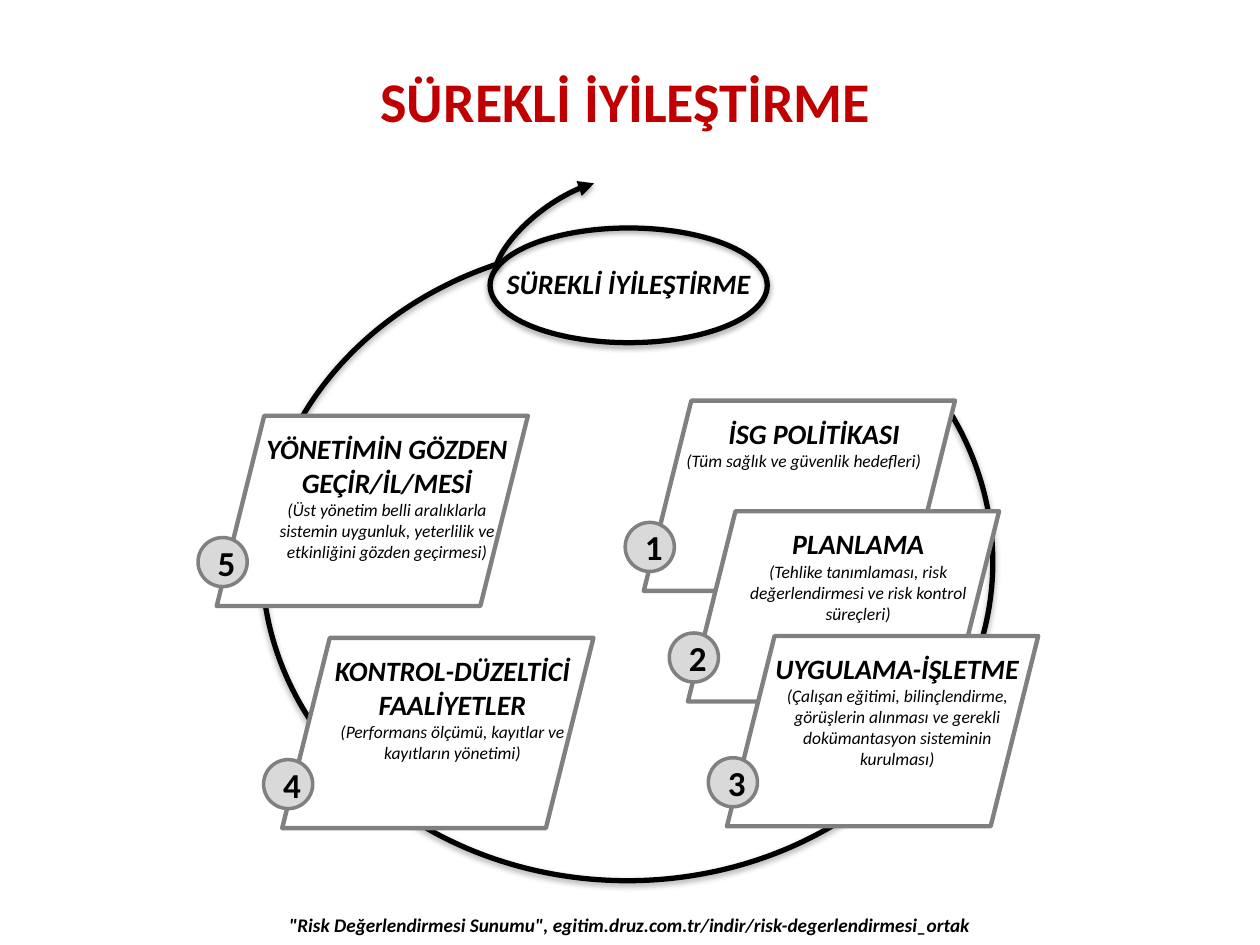
import pptx
import pptx.util
import pptx.dml.color
import pptx.enum.shapes
import pptx.enum.text
import pptx.oxml
import pptx.oxml.ns

HUES = {"ink": "000000", "red": "C00000", "gray": "808080",
        "pale": "D9D9D9", "white": "FFFFFF"}
FORM = pptx.enum.shapes.MSO_SHAPE
ALIGN = pptx.enum.text.PP_ALIGN
ANCHOR = pptx.enum.text.MSO_ANCHOR
SPACE = pptx.oxml.ns.nsdecls("a")
PAGE = (0, 0, pptx.util.Inches(10), pptx.util.Inches(7.5))

STEPS = [
    (51.1, 42.4, "İSG POLİTİKASI", "(Tüm sağlık ve güvenlik hedefleri)", ALIGN.LEFT),
    (54.6, 54.1, "PLANLAMA",
     "(Tehlike tanımlaması, risk değerlendirmesi ve risk kontrol süreçleri)", ALIGN.CENTER),
    (57.7, 67.3, "UYGULAMA-İŞLETME",
     "(Çalışan eğitimi, bilinçlendirme, görüşlerin alınması ve gerekli "
     "dokümantasyon sisteminin kurulması)", ALIGN.CENTER),
    (22.4, 67.5, "KONTROL-DÜZELTİCİ FAALİYETLER",
     "(Performans ölçümü, kayıtlar ve kayıtların yönetimi)", ALIGN.CENTER),
    (17.2, 44, "YÖNETİMİN GÖZDEN GEÇİR/İL/MESİ",
     "(Üst yönetim belli aralıklarla sistemin uygunluk, yeterlilik ve "
     "etkinliğini gözden geçirmesi)", ALIGN.CENTER),
]


def cut(box, x, y, wide, high):
    left, top, width, height = box
    return (int(left + width * x / 100), int(top + height * y / 100),
            int(width * wide / 100), int(height * high / 100))


def hue(name):
    return pptx.dml.color.RGBColor.from_string(HUES[name])


def style(para, size, tint="ink", slant=True, bold=True, align=ALIGN.CENTER):
    para.alignment = align
    for run in para.runs:
        font = run.font
        font.name, font.size = "Calibri", pptx.util.Pt(size)
        font.bold, font.italic = bold, slant
        font.color.rgb = hue(tint)


def draw(shapes, form, box, line, width, fill=None):
    shape = shapes.add_shape(form, *box)
    shape.shadow.inherit = False
    if fill:
        shape.fill.solid()
        shape.fill.fore_color.rgb = hue(fill)
    else:
        shape.fill.background()
    shape.line.color.rgb = hue(line)
    shape.line.width = pptx.util.Pt(width)
    return shape


def write(shapes, box, text, size):
    frame = shapes.add_textbox(*box).text_frame
    frame.word_wrap = True
    frame.auto_size = pptx.enum.text.MSO_AUTO_SIZE.SHAPE_TO_FIT_TEXT
    frame.text = text
    style(frame.paragraphs[0], size)
    return frame


def shade(shape):
    glow = pptx.oxml.parse_xml(
        f'<a:outerShdw {SPACE} blurRad="40000" dist="23000" dir="5400000" rotWithShape="0">'
        f'<a:srgbClr val="{HUES["ink"]}"><a:alpha val="35000"/></a:srgbClr></a:outerShdw>')
    shape.element.spPr.find(pptx.oxml.ns.qn("a:effectLst")).append(glow)


def curve(shapes, box, start, end):
    arc = draw(shapes, FORM.ARC, box, "ink", 3)
    arc.adjustments[0], arc.adjustments[1] = start, end
    shade(arc)
    return arc


def cycle(slide, box):
    shapes = slide.shapes.add_group_shape().shapes
    curve(shapes, cut(box, 0, 12.15, 100, 87.85), 201.32, 148.09)
    shade(draw(shapes, FORM.OVAL, cut(box, 31.2, 10.07, 37.93, 15.8), "ink", 3))
    arrow = curve(shapes, cut(box, 36.55, 0, 9.31, 22.57), 169.62, 39.99)
    arrow.rotation = 233.3
    arrow.line._get_or_add_ln().append(
        pptx.oxml.parse_xml(f'<a:tailEnd {SPACE} type="triangle"/>'))
    write(shapes, cut(box, 31, 14.58, 38.28, 6.42), "SÜREKLİ İYİLEŞTİRME", 16)


def step(slide, box, rank, head, note, align):
    shapes = slide.shapes.add_group_shape().shapes
    draw(shapes, FORM.PARALLELOGRAM, box, "gray", 2.5, "white")
    frame = write(shapes, cut(box, 9.7, 5, 90, 58), head, 16)
    para = frame.add_paragraph()
    para.text = note
    style(para, 10, bold=False, align=align)
    badge = draw(shapes, FORM.OVAL, cut(box, -6, 64, 15.8, 25.8), "gray", 2, "pale")
    frame = badge.text_frame
    frame.margin_right = pptx.util.Inches(0.04)
    frame.vertical_anchor = ANCHOR.MIDDLE
    frame.text = str(rank)
    style(frame.paragraphs[0], 20, slant=False)


def title(slide, box):
    shape = slide.shapes.title
    shape.left, shape.top, shape.width, shape.height = box
    frame = shape.text_frame
    frame.vertical_anchor = ANCHOR.TOP
    frame.text = "SÜREKLİ İYİLEŞTİRME"
    style(frame.paragraphs[0], 32, "red", slant=False)


def source(slide, box):
    write(slide.shapes, box, '"Risk Değerlendirmesi Sunumu", '
          'egitim.druz.com.tr/indir/risk-degerlendirmesi_ortak', 11)


def main():
    deck = pptx.Presentation()
    deck.slide_width, deck.slide_height = PAGE[2:]
    slide = deck.slides.add_slide(deck.slide_layouts[5])
    title(slide, cut(PAGE, 1.9, 6.4, 95.5, 8.53))
    cycle(slide, cut(PAGE, 20.8, 16.4, 58, 76.8))
    for rank, (x, y, head, note, align) in enumerate(STEPS, 1):
        step(slide, cut(PAGE, x, y, 24.7, 20.13), rank, head, note, align)
    source(slide, cut(PAGE, 0, 96, 100, 3.87))
    deck.save("out.pptx")


if __name__ == "__main__":
    main()
